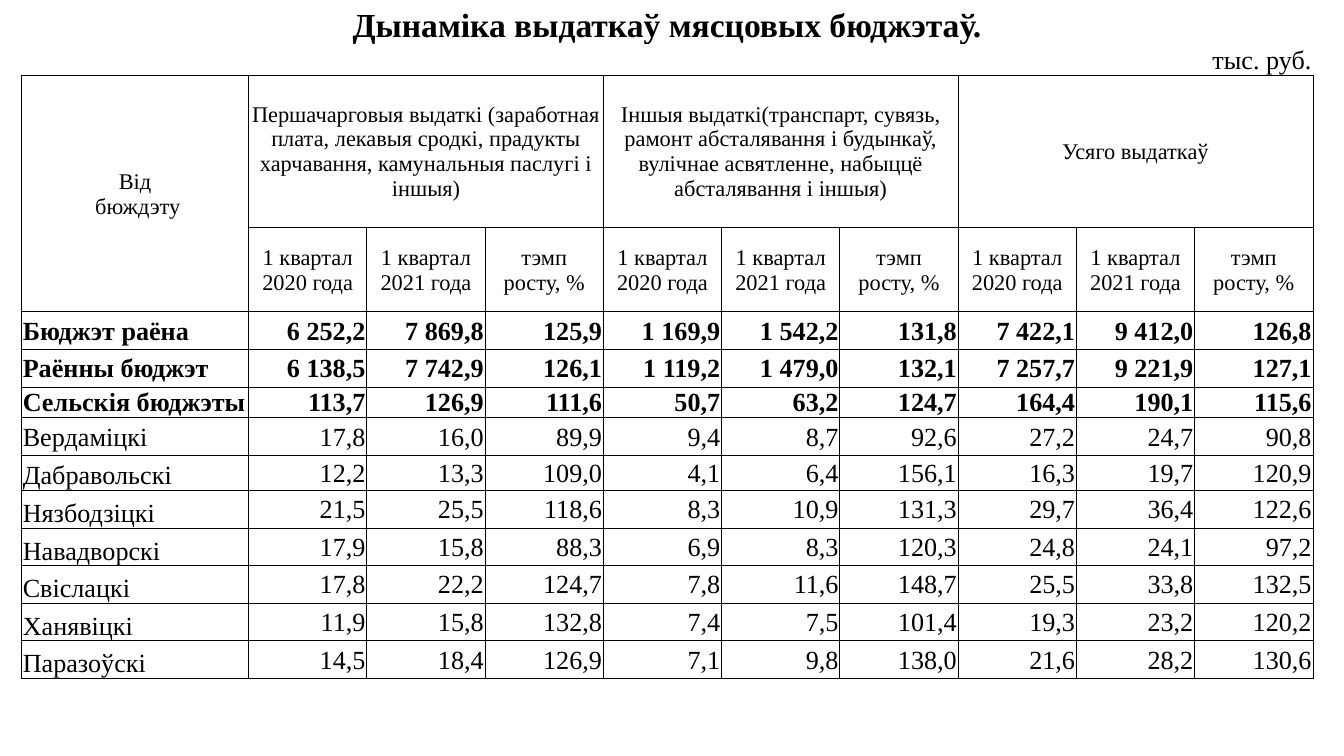
import pptx
import pptx.util
import pptx.dml.color
import pptx.enum.text
import pptx.oxml
import pptx.oxml.ns

ALIGN = pptx.enum.text.PP_ALIGN
ANCHOR = pptx.enum.text.MSO_ANCHOR
In, Pt = pptx.util.Inches, pptx.util.Pt

FONT = "Times New Roman"
BLACK = "000000"
TITLE = "Дынаміка выдаткаў мясцовых бюджэтаў."
UNIT = "тыс. руб."
CORNER = "Від\n бюждэту"
GROUPS = [
    "Першачарговыя выдаткі (заработная плата, лекавыя сродкі, прадукты харчавання, камунальныя паслугі і іншыя)",
    "Іншыя выдаткі(транспарт, сувязь, рамонт абсталявання і будынкаў, вулічнае асвятленне, набыццё абсталявання і іншыя)",
    "Усяго выдаткаў",
]
GROWTH = "тэмп\nросту, %"
QUARTERS = ["1 квартал 2020 года", "1 квартал 2021 года", GROWTH]
SUBHEADS = ["1 квартал\n2020 года"] + QUARTERS[1:] + QUARTERS * 2
TOTALS = [
    ("Бюджэт раёна", "6 252,2", "7 869,8", "125,9", "1 169,9", "1 542,2", "131,8", "7 422,1", "9 412,0", "126,8"),
    ("Раённы бюджэт", "6 138,5", "7 742,9", "126,1", "1 119,2", "1 479,0", "132,1", "7 257,7", "9 221,9", "127,1"),
    ("Сельскія бюджэты", "113,7", "126,9", "111,6", "50,7", "63,2", "124,7", "164,4", "190,1", "115,6"),
]
VILLAGES = [
    ("Вердаміцкі", "17,8", "16,0", "89,9", "9,4", "8,7", "92,6", "27,2", "24,7", "90,8"),
    ("Дабравольскі", "12,2", "13,3", "109,0", "4,1", "6,4", "156,1", "16,3", "19,7", "120,9"),
    ("Нязбодзіцкі", "21,5", "25,5", "118,6", "8,3", "10,9", "131,3", "29,7", "36,4", "122,6"),
    ("Навадворскі", "17,9", "15,8", "88,3", "6,9", "8,3", "120,3", "24,8", "24,1", "97,2"),
    ("Свіслацкі", "17,8", "22,2", "124,7", "7,8", "11,6", "148,7", "25,5", "33,8", "132,5"),
    ("Ханявіцкі", "11,9", "15,8", "132,8", "7,4", "7,5", "101,4", "19,3", "23,2", "120,2"),
    ("Паразоўскі", "14,5", "18,4", "126,9", "7,1", "9,8", "138,0", "21,6", "28,2", "130,6"),
]
COLS = [1.69] + [0.88] * 9
ROWS = [0.3, 0.23, 1.13, 0.63, 0.28, 0.28, 0.23, 0.28, 0.26] + [0.28] * 5
UNIT_ROW, GROUP_ROW, SUB_ROW, DATA_ROW = 1, 2, 3, 4
MERGES = [(0, 0, 0, 9), (GROUP_ROW, 0, SUB_ROW, 0)]
MERGES += [(UNIT_ROW, c, UNIT_ROW, c + 1) for c in (1, 3, 5)]
MERGES += [(GROUP_ROW, c, GROUP_ROW, c + 2) for c in (1, 4, 7)]
MARGINS = {"margin_left": In(0.01), "margin_right": In(0.01), "margin_top": In(0.01), "margin_bottom": 0}


def rgb(value):
    return pptx.dml.color.RGBColor.from_string(value)


def set_attrs(obj, values):
    for name, value in values.items():
        setattr(obj, name, value)


def write(cell, text, size, align, anchor=ANCHOR.MIDDLE, bold=False):
    cell.vertical_anchor = anchor
    cell.text = text
    for p in cell.text_frame.paragraphs:
        p.alignment = align
        for r in p.runs:
            set_attrs(r.font, {"name": FONT, "size": Pt(size), "bold": bold})
            r.font.color.rgb = rgb(BLACK)


def add_borders(cell, sides):
    tcPr = cell._tc.get_or_add_tcPr()
    for i, side in enumerate(sides):
        tcPr.insert(i, pptx.oxml.parse_xml(
            f'<a:ln{side} {pptx.oxml.ns.nsdecls("a")} w="{Pt(0.5)}"><a:solidFill>'
            f'<a:srgbClr val="{BLACK}"/></a:solidFill></a:ln{side}>'))


def set_empty_size(cell, size):
    cell.text_frame.paragraphs[0]._p.append(pptx.oxml.parse_xml(
        f'<a:endParaRPr {pptx.oxml.ns.nsdecls("a")} sz="{size * 100}"/>'))


prs = pptx.Presentation()
prs.slide_width, prs.slide_height = In(10), In(10 * 9 / 16)
s = prs.slides.add_slide(prs.slide_layouts[6])
table = s.shapes.add_table(len(ROWS), len(COLS), In(0.16), In(0.03), In(sum(COLS)), In(sum(ROWS))).table
set_attrs(table, {"first_row": False, "horz_banding": False})
for col, width in zip(table.columns, COLS):
    col.width = In(width)
for row, height in zip(table.rows, ROWS):
    row.height = In(height)

for r in range(len(ROWS)):
    for c in range(len(COLS)):
        cell = table.cell(r, c)
        set_attrs(cell, MARGINS)
        cell.fill.background()
        if r >= UNIT_ROW:
            add_borders(cell, "B" if r == UNIT_ROW else "LRTB")
        if r == UNIT_ROW and c < len(COLS) - 1:
            set_empty_size(cell, 10)
for top, left, bottom, right in MERGES:
    table.cell(top, left).merge(table.cell(bottom, right))

write(table.cell(0, 0), TITLE, 18, ALIGN.CENTER, ANCHOR.BOTTOM, True)
write(table.cell(UNIT_ROW, len(COLS) - 1), UNIT, 14, ALIGN.RIGHT, ANCHOR.BOTTOM)
write(table.cell(GROUP_ROW, 0), CORNER, 12, ALIGN.CENTER)
for i, text in enumerate(GROUPS):
    write(table.cell(GROUP_ROW, 1 + 3 * i), text, 12, ALIGN.CENTER)
for c, text in enumerate(SUBHEADS, 1):
    write(table.cell(SUB_ROW, c), text, 12, ALIGN.CENTER)
for i, values in enumerate(TOTALS + VILLAGES):
    for c, text in enumerate(values):
        low = c == 0 and i > len(TOTALS)
        write(table.cell(DATA_ROW + i, c), text, 14, ALIGN.RIGHT if c else ALIGN.LEFT,
              ANCHOR.BOTTOM if low else ANCHOR.MIDDLE, i < len(TOTALS))

prs.save("out.pptx")
